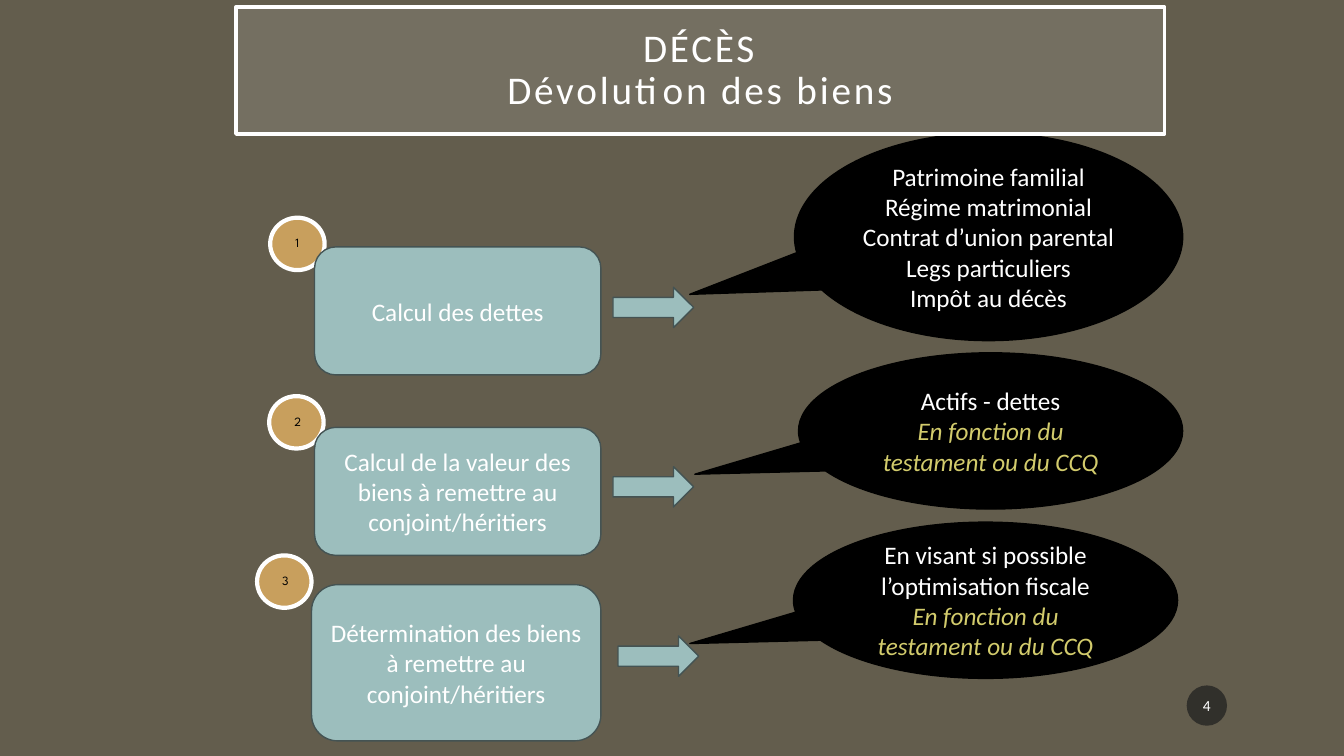
from dataclasses import dataclass

from lxml.etree import SubElement
from pptx import Presentation
from pptx.dml.color import RGBColor
from pptx.enum.shapes import MSO_SHAPE
from pptx.enum.text import MSO_ANCHOR, MSO_AUTO_SIZE, PP_ALIGN
from pptx.oxml.ns import qn
from pptx.shapes.autoshape import Shape
from pptx.util import Emu, Pt

PX = 9144  # 100 px to the inch
COLORS = {
    "background": "635D4D", "white": "FFFFFF", "black": "000000",
    "gold": "C89F5D", "teal": "9CBEBD", "teal_edge": "445353",
    "yellow": "D2CB6C", "title": "D9D9D9", "page": "1D1D1D",
}


@dataclass
class Box:
    left: int
    top: int
    width: int
    height: int

    def emu(self) -> list[Emu]:
        return [Emu(v * PX) for v in (self.left, self.top, self.width, self.height)]


@dataclass
class Step:
    label: str
    badge: tuple[int, int]
    card: Box
    arrow: tuple[int, int]
    callout: Box
    notes: list[str]
    aside: str = ""


BY_WILL = "En fonction du testament ou du CCQ"
STEPS = [
    Step("Calcul des dettes", (268, 216), Box(312, 245, 284, 127), (608, 285),
         Box(788, 132, 385, 206),
         ["Patrimoine familial", "Régime matrimonial", "Contrat d’union parental",
          "Legs particuliers", "Impôt au décès"]),
    Step("Calcul de la valeur des biens à remettre au conjoint/héritiers",
         (267, 393), Box(312, 424, 284, 127), (608, 463),
         Box(792, 350, 381, 155), ["Actifs - dettes"], BY_WILL),
    Step("Détermination des biens à remettre au conjoint/héritiers",
         (255, 551), Box(309, 580, 287, 155), (613, 631),
         Box(787, 518, 381, 155), ["En visant si possible l’optimisation fiscale"], BY_WILL),
]


def rgb(name: str) -> RGBColor:
    return RGBColor.from_string(COLORS[name])


def paint(sp: Shape, fill: str, line: str = "", width: float = 1, alpha: int = 100) -> None:
    sp.fill.solid()
    sp.fill.fore_color.rgb = rgb(fill)
    if alpha < 100:
        clr = sp._element.spPr.find(qn("a:solidFill"))[0]
        SubElement(clr, qn("a:alpha")).set("val", str(alpha * 1000))
    if line:
        sp.line.color.rgb = rgb(line)
        sp.line.width = Pt(width)
    else:
        sp.line.fill.background()


def set_frame(sp: Shape, inset_x: int = 10, inset_y: int = 5) -> None:
    tf = sp.text_frame
    tf.word_wrap = True
    tf.auto_size = MSO_AUTO_SIZE.NONE
    tf.vertical_anchor = MSO_ANCHOR.MIDDLE
    tf.margin_left = tf.margin_right = Emu(inset_x * PX)
    tf.margin_top = tf.margin_bottom = Emu(inset_y * PX)


def style(p, size: int = 18, color: str = "white", font: str = "Calibri") -> None:
    p.alignment = PP_ALIGN.CENTER
    p.font.size = Pt(size)
    p.font.name = font
    p.font.color.rgb = rgb(color)


def add_shape(slide, kind: MSO_SHAPE, box: Box) -> Shape:
    sp = slide.shapes.add_shape(kind, *box.emu())
    sp.shadow.inherit = False
    set_frame(sp)
    return sp


def write(sp: Shape, lines: list[str]) -> None:
    tf = sp.text_frame
    tf.text = "\n".join(lines)
    for p in tf.paragraphs:
        style(p)


def add_step(slide, number: int, step: Step) -> None:
    # Numbered badge
    sp = add_shape(slide, MSO_SHAPE.OVAL, Box(*step.badge, 54, 52))
    paint(sp, "gold", "white", 3)
    set_frame(sp, 17, 17)
    p = sp.text_frame.paragraphs[0]
    p.text = str(number)
    p.line_spacing = 0.9
    style(p, 9, "black", "League Spartan")

    # Step card and arrow
    sp = add_shape(slide, MSO_SHAPE.ROUNDED_RECTANGLE, step.card)
    paint(sp, "teal", "teal_edge")
    write(sp, [step.label])
    sp = add_shape(slide, MSO_SHAPE.RIGHT_ARROW, Box(*step.arrow, 80, 40))
    paint(sp, "teal", "teal_edge")

    # Callout
    sp = add_shape(slide, MSO_SHAPE.OVAL_CALLOUT, step.callout)
    sp.adjustments[0], sp.adjustments[1] = -0.77, 0.277
    paint(sp, "black", "black")
    write(sp, step.notes)
    if step.aside:
        p = sp.text_frame.add_paragraph()
        p.text = step.aside
        style(p, color="yellow")
        p.font.italic = True


def add_title(slide) -> None:
    sp = slide.shapes.title
    sp.left, sp.top, sp.width, sp.height = Box(234, 7, 921, 126).emu()
    paint(sp, "title", "white", 2.5, alpha=15)
    set_frame(sp, 20, 20)
    p = sp.text_frame.paragraphs[0]
    p.add_run().text = "DÉCÈS"
    p.add_line_break()
    p.add_run().text = "Dévolution des biens"
    p.line_spacing = 0.9
    style(p, 28)
    for r in p.runs:
        r.font._element.set("spc", "200")
    # The title lies over the first callout
    slide.shapes._spTree.append(sp._element)


def add_page_number(slide) -> None:
    sp = add_shape(slide, MSO_SHAPE.OVAL, Box(1177, 680, 40, 40))
    paint(sp, "page", alpha=70)
    set_frame(sp, 2, 5)
    p = sp.text_frame.paragraphs[0]
    p.text = "4"
    style(p, 11)


def main() -> None:
    prs = Presentation()
    prs.slide_width, prs.slide_height = Emu(1333 * PX), Emu(750 * PX)
    slide = prs.slides.add_slide(prs.slide_layouts[5])
    slide.background.fill.solid()
    slide.background.fill.fore_color.rgb = rgb("background")
    add_page_number(slide)
    for number, step in enumerate(STEPS, 1):
        add_step(slide, number, step)
    add_title(slide)
    prs.save("out.pptx")


if __name__ == "__main__":
    main()
